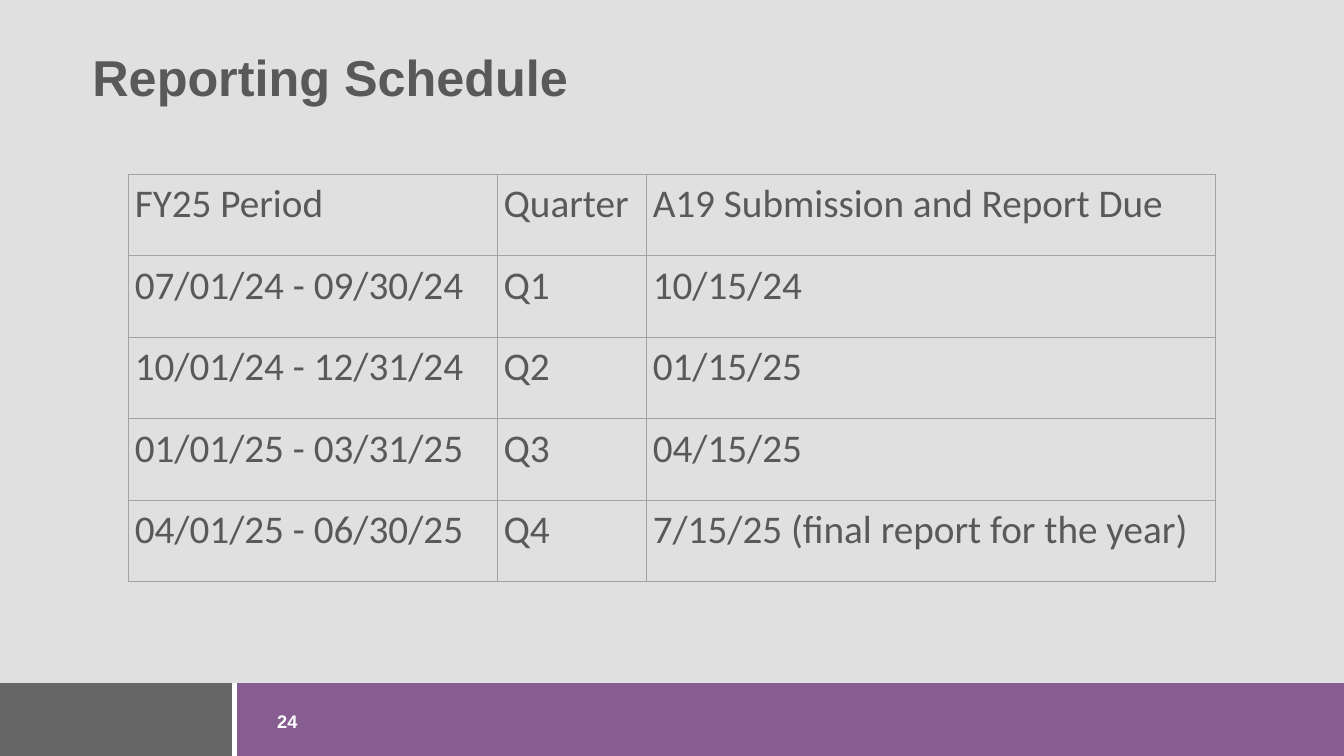
from lxml.etree import SubElement
from pptx import Presentation
from pptx.dml.color import RGBColor
from pptx.enum.shapes import MSO_CONNECTOR, MSO_SHAPE
from pptx.enum.text import MSO_ANCHOR
from pptx.oxml import parse_xml
from pptx.oxml.ns import nsdecls, qn
from pptx.util import Pt

WIDTH, HEIGHT = 960, 540
FOOTER_TOP = 488
DIVIDER = 167.6
TEXT, WHITE, BORDER = "595959", "FFFFFF", "A3A3A3"

COLUMN_WIDTHS = [263.5, 106.5, 406]
ROW_HEIGHT = 58.2
SCHEDULE = [
    ["FY25 Period", "Quarter", "A19 Submission and Report Due"],
    ["07/01/24 - 09/30/24", "Q1", "10/15/24"],
    ["10/01/24 - 12/31/24", "Q2", "01/15/25"],
    ["01/01/25 - 03/31/25", "Q3", "04/15/25"],
    ["04/01/25 - 06/30/25", "Q4", "7/15/25 (final report for the year)"],
]


def color(hex_string):
    return RGBColor.from_string(hex_string)


def style_font(para, name, size, hex_string, bold=False):
    font = para.runs[0].font
    font.name, font.size, font.bold = name, Pt(size), bold
    font.color.rgb = color(hex_string)


def set_margins(holder, margin):
    holder.margin_left = holder.margin_right = Pt(margin)
    holder.margin_top = holder.margin_bottom = Pt(margin)


def add_panel(page, box, hex_string, opacity):
    """Add a borderless rectangle whose opacity is given in percent."""
    panel = page.shapes.add_shape(MSO_SHAPE.RECTANGLE, *map(Pt, box))
    panel.shadow.inherit = False
    panel.line.fill.background()
    panel.fill.solid()
    panel.fill.fore_color.rgb = color(hex_string)
    tint = panel.fill._xPr.find(qn("a:solidFill"))[0]
    SubElement(tint, qn("a:alpha"), val=str(opacity * 1000))


def add_label(page, box, text, size, hex_string, anchor):
    frame = page.shapes.add_textbox(*map(Pt, box)).text_frame
    frame.word_wrap = True
    frame.vertical_anchor = anchor
    set_margins(frame, 0)
    para = frame.paragraphs[0]
    para.text = text
    para.line_spacing = 0.9
    style_font(para, "Arial", size, hex_string, bold=True)


def add_footer(page, box):
    left, top, width, height = box
    split = left + DIVIDER
    add_panel(page, (split, top, width - DIVIDER, height), "4B055D", 60)
    add_panel(page, (left, top, DIVIDER, height), "262626", 65)
    add_label(page, (split + 30.4, top + 21, 32, 19), "24", 13, WHITE, MSO_ANCHOR.TOP)
    rule = page.shapes.add_connector(
        MSO_CONNECTOR.STRAIGHT, Pt(split), Pt(top), Pt(split), Pt(top + height))
    rule.line.color.rgb = color(WHITE)
    rule.line.width = Pt(4)
    SubElement(rule._element.spPr, qn("a:effectLst"))


def add_cell_borders(cell):
    properties = cell._tc.get_or_add_tcPr()
    for index, side in enumerate(("lnL", "lnR", "lnT", "lnB")):
        properties.insert(index, parse_xml(
            f'<a:{side} {nsdecls("a")} w="{Pt(1)}"><a:solidFill>'
            f'<a:srgbClr val="{BORDER}"/></a:solidFill></a:{side}>'))


def add_schedule(page, left, top):
    table = page.shapes.add_table(
        len(SCHEDULE), len(COLUMN_WIDTHS), Pt(left), Pt(top),
        Pt(sum(COLUMN_WIDTHS)), Pt(ROW_HEIGHT * len(SCHEDULE))).table
    table.first_row = table.horz_banding = False
    for column, width in zip(table.columns, COLUMN_WIDTHS):
        column.width = Pt(width)
    for row, texts in zip(table.rows, SCHEDULE):
        row.height = Pt(ROW_HEIGHT)
        for cell, text in zip(row.cells, texts):
            set_margins(cell, 4.3)
            cell.fill.background()
            add_cell_borders(cell)
            para = cell.text_frame.paragraphs[0]
            para.text = text
            style_font(para, "Calibri", 28, TEXT)


def main():
    deck = Presentation()
    deck.slide_width, deck.slide_height = Pt(WIDTH), Pt(HEIGHT)
    page = deck.slides.add_slide(deck.slide_layouts[6])
    add_panel(page, (0, 0, WIDTH, HEIGHT), "D9D9D9", 80)
    add_footer(page, (0, FOOTER_TOP, WIDTH, HEIGHT - FOOTER_TOP))
    add_label(page, (66, 37.5, 770, 39.5), "Reporting Schedule", 36, TEXT, MSO_ANCHOR.MIDDLE)
    add_schedule(page, 92, 124.5)
    deck.save("out.pptx")


if __name__ == "__main__":
    main()
